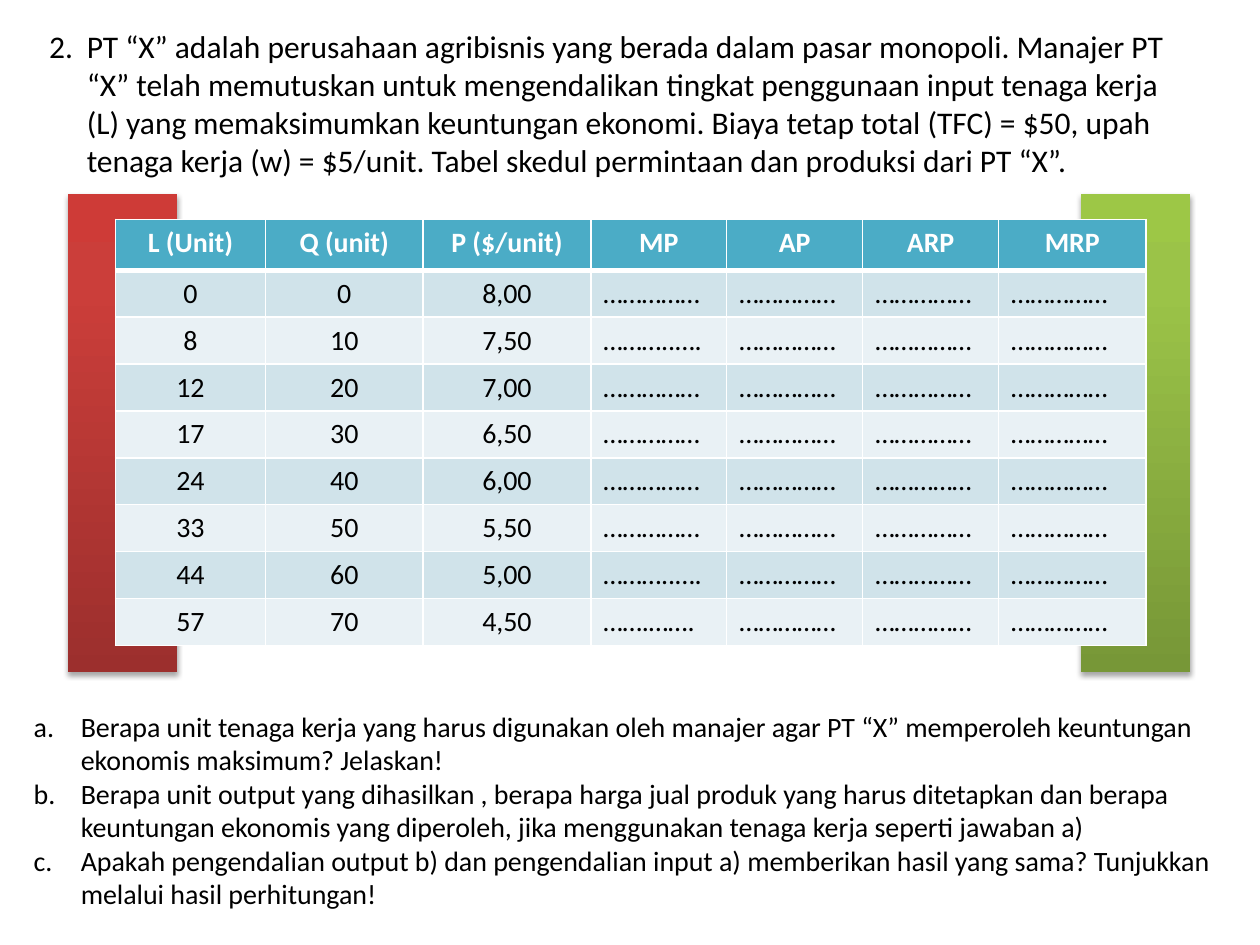
import pptx
import pptx.dml.color
import pptx.enum.shapes
import pptx.enum.text
import pptx.oxml
import pptx.oxml.ns
import pptx.util

Cm = pptx.util.Cm
Align = pptx.enum.text.PP_ALIGN

INTRO = (
    "2.\tPT “X” adalah perusahaan agribisnis yang berada dalam pasar monopoli. "
    "Manajer PT “X” telah memutuskan untuk mengendalikan tingkat penggunaan input "
    "tenaga kerja (L) yang memaksimumkan keuntungan ekonomi. Biaya tetap total "
    "(TFC) = $50, upah tenaga kerja (w) = $5/unit. Tabel skedul permintaan dan "
    "produksi dari PT “X”."
)
TASKS = [
    "Berapa unit tenaga kerja yang harus digunakan oleh manajer agar PT “X” "
    "memperoleh keuntungan ekonomis maksimum? Jelaskan!",
    "Berapa unit output yang dihasilkan , berapa harga jual produk yang harus "
    "ditetapkan dan berapa keuntungan ekonomis yang diperoleh, jika menggunakan "
    "tenaga kerja seperti jawaban a)",
    "Apakah pengendalian output b) dan pengendalian input a) memberikan hasil "
    "yang sama? Tunjukkan melalui hasil perhitungan!",
]
HEADS = ["L (Unit)", "Q (unit)", "P ($/unit)", "MP", "AP", "ARP", "MRP"]
DOTS = "……………"
MIXED = "………..…."
DATA = [
    ("0", "0", "8,00", DOTS),
    ("8", "10", "7,50", MIXED),
    ("12", "20", "7,00", DOTS),
    ("17", "30", "6,50", DOTS),
    ("24", "40", "6,00", DOTS),
    ("33", "50", "5,50", DOTS),
    ("44", "60", "5,00", MIXED),
    ("57", "70", "4,50", "…….……."),
]
WIDTHS = [3.02, 3.18, 3.38, 2.74, 2.74, 2.74, 2.97]
HEAD_H, ROW_H = 1.03, 0.94

THEME = {
    "font": "Calibri",
    "intro": 18,
    "body": 16,
    "ink": "000000",
    "white": "FFFFFF",
    "head": "4BACC6",
    "bands": ("D0E3EA", "E9F1F5"),
    "green": ("779737", "9BC348", "9DC746"),
    "red": ("9C2F2D", "CB3E3A", "CE3B37"),
}
BARS = [(21.79, "green"), (1.37, "red")]
NS = pptx.oxml.ns.nsdecls("a")


def tint(code):
    return pptx.dml.color.RGBColor.from_string(code)


def write(para, text, size=THEME["body"], color=THEME["ink"], bold=False,
          align=Align.LEFT, hang=0, count=None):
    para.alignment = align
    run = para.add_run()
    run.text = text
    font = run.font
    font.name, font.size, font.bold = THEME["font"], pptx.util.Pt(size), bold
    font.color.rgb = tint(color)
    if hang:
        props = para._p.get_or_add_pPr()
        props.set("marL", str(Cm(hang)))
        props.set("indent", str(-Cm(hang)))
        if count:
            props.append(pptx.oxml.parse_xml(f'<a:buAutoNum {NS} type="{count}"/>'))


def add_box(slide, left, top, width, height, texts, **style):
    frame = slide.shapes.add_textbox(Cm(left), Cm(top), Cm(width), Cm(height)).text_frame
    frame.word_wrap = True
    frame.auto_size = pptx.enum.text.MSO_AUTO_SIZE.SHAPE_TO_FIT_TEXT
    for i, text in enumerate(texts):
        para = frame.add_paragraph() if i else frame.paragraphs[0]
        write(para, text, **style)


def add_bar(slide, left, hue):
    bar = slide.shapes.add_shape(
        pptx.enum.shapes.MSO_SHAPE.RECTANGLE, Cm(left), Cm(3.91), Cm(2.21), Cm(9.63))
    bar.line.fill.background()
    stops = "".join(
        f'<a:gs pos="{at * 1000}"><a:srgbClr val="{code}"/></a:gs>'
        for at, code in zip((0, 80, 100), THEME[hue]))
    props = bar._element.spPr
    props.insert(2, pptx.oxml.parse_xml(
        f'<a:gradFill {NS} rotWithShape="1"><a:gsLst>{stops}</a:gsLst>'
        '<a:lin ang="16200000" scaled="0"/></a:gradFill>'))
    props.append(pptx.oxml.parse_xml(
        f'<a:effectLst {NS}><a:outerShdw blurRad="39370" dist="22860" dir="5400000" '
        f'rotWithShape="0"><a:srgbClr val="{THEME["ink"]}"><a:alpha val="35000"/>'
        '</a:srgbClr></a:outerShdw></a:effectLst>'))


def edge(cell, **widths):
    props = cell._tc.get_or_add_tcPr()
    for i, side in enumerate("LRTB"):
        props.insert(i, pptx.oxml.parse_xml(
            f'<a:ln{side} {NS} w="{pptx.util.Pt(widths.get(side, 1))}"><a:solidFill>'
            f'<a:srgbClr val="{THEME["white"]}"/></a:solidFill></a:ln{side}>'))


def add_grid(slide):
    rows = [HEADS] + [row + (DOTS,) * 3 for row in DATA]
    tall = HEAD_H + ROW_H * len(DATA)
    grid = slide.shapes.add_table(
        len(rows), len(HEADS), Cm(2.33), Cm(4.42), Cm(sum(WIDTHS)), Cm(tall)).table
    for col, width in zip(grid.columns, WIDTHS):
        col.width = Cm(width)
    for r, row in enumerate(rows):
        head = r == 0
        grid.rows[r].height = Cm(HEAD_H if head else ROW_H)
        for c, text in enumerate(row):
            cell = grid.cell(r, c)
            cell.fill.solid()
            cell.fill.fore_color.rgb = tint(
                THEME["head"] if head else THEME["bands"][(r - 1) % 2])
            edge(cell, B=3 if head else 1, T=3 if r == 1 else 1)
            write(cell.text_frame.paragraphs[0], text, bold=head,
                  color=THEME["white"] if head else THEME["ink"],
                  align=Align.CENTER if head or c < 3 else Align.LEFT)


def main():
    deck = pptx.Presentation()
    deck.slide_width, deck.slide_height = Cm(25.4), Cm(19.05)
    slide = deck.slides.add_slide(deck.slide_layouts[6])
    for left, hue in BARS:
        add_bar(slide, left, hue)
    add_grid(slide)
    add_box(slide, 0.43, 14.17, 24.33, 4.37, TASKS, hang=0.95, count="alphaLcPeriod")
    add_box(slide, 0.74, 0.43, 23.09, 3.33, [INTRO], size=THEME["intro"], hang=0.76)
    deck.save("out.pptx")


if __name__ == "__main__":
    main()
